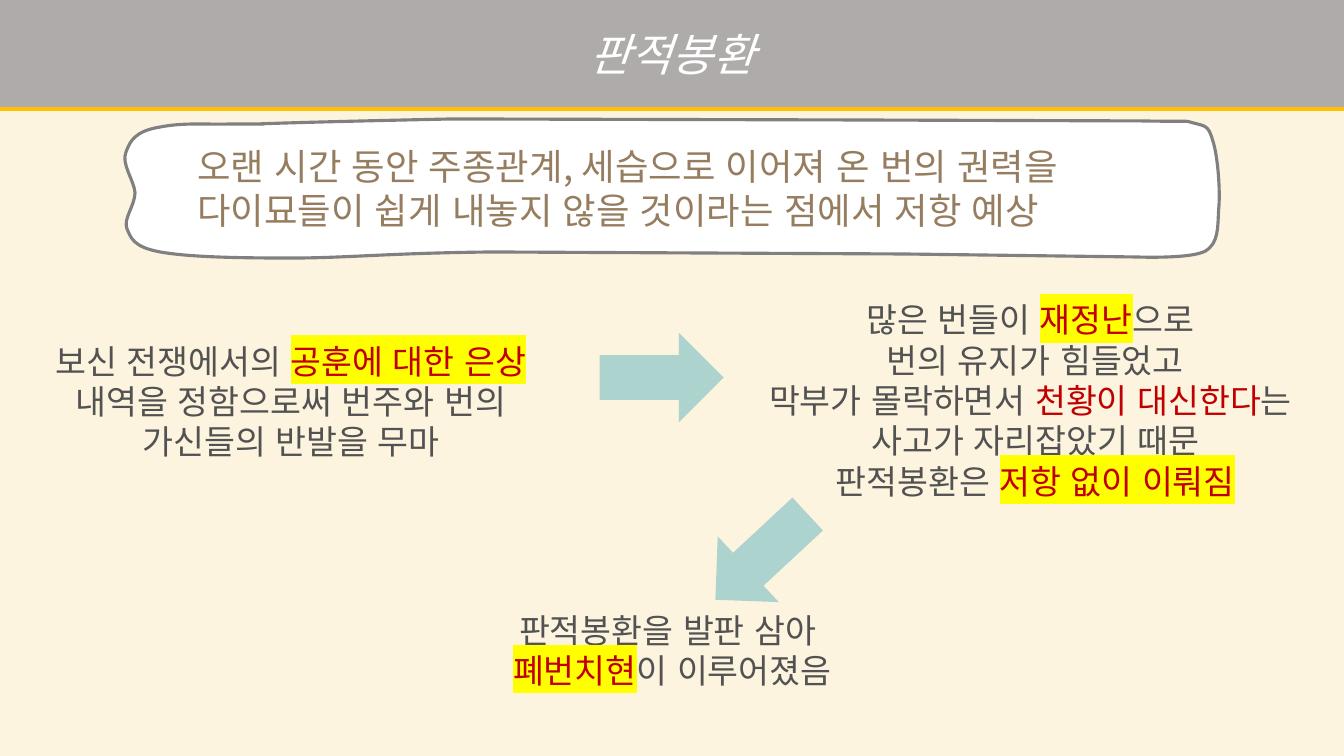
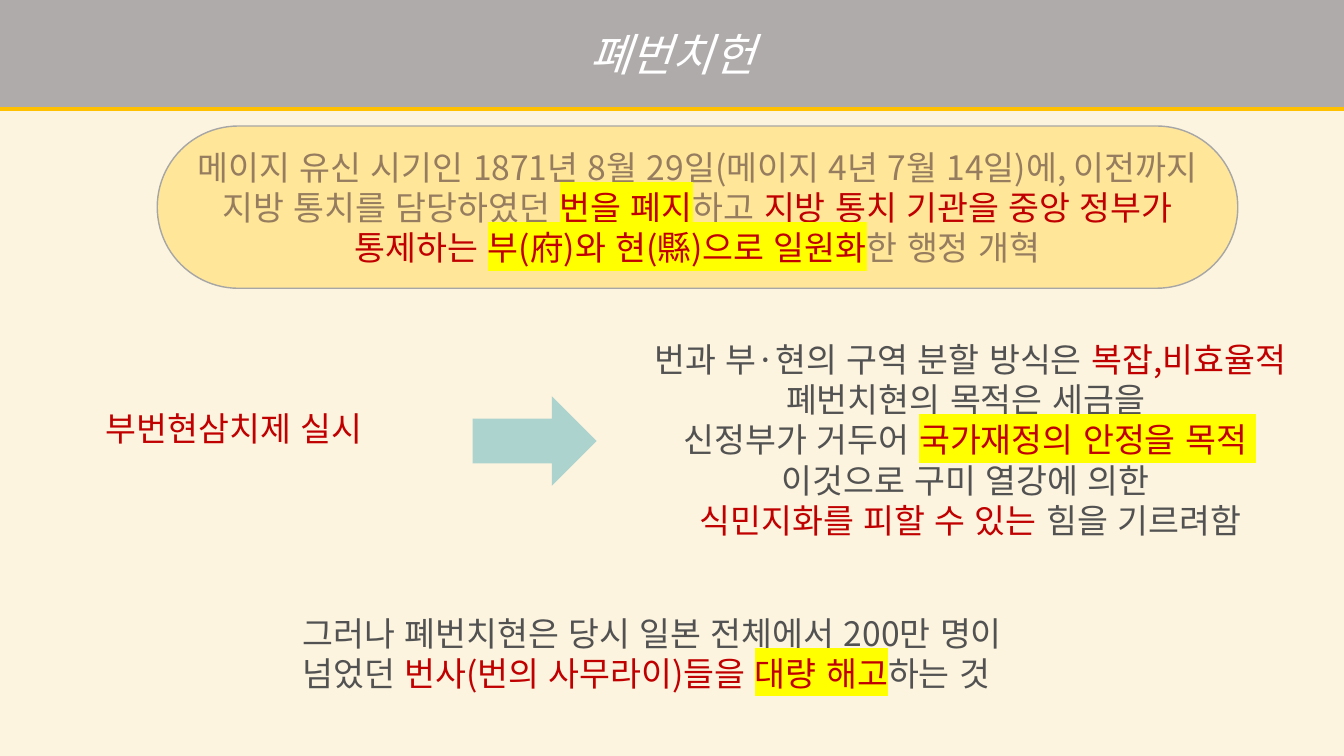
"""Build two slides on the return of the domains and their abolition."""
from lxml import etree
from pptx import Presentation
from pptx.dml.color import RGBColor
from pptx.enum.lang import MSO_LANGUAGE_ID as LANG
from pptx.enum.shapes import MSO_SHAPE as SHAPE
from pptx.enum.text import MSO_ANCHOR as ANCHOR, PP_ALIGN as ALIGN
from pptx.oxml.ns import qn
from pptx.util import Inches, Pt

FONT = "Noto Sans CJK KR"
CREAM = RGBColor(0xFC, 0xF4, 0xDF)
WHITE = RGBColor(0xFF, 0xFF, 0xFF)
BAND = RGBColor(0xAF, 0xAB, 0xAB)
GOLD = RGBColor(0xFF, 0xC0, 0x00)
YELLOW = RGBColor(0xFF, 0xFF, 0x00)
SAND = RGBColor(0xFF, 0xE6, 0x99)
TEAL = RGBColor(0xAC, 0xD3, 0xCE)
OUTLINE = RGBColor(0x80, 0x80, 0x80)
PILL_LINE = RGBColor(0xA6, 0xA6, 0xA6)
BROWN = RGBColor(0x96, 0x7D, 0x5F)
GRAY = RGBColor(0x52, 0x52, 0x52)
RED = RGBColor(0xC0, 0x00, 0x00)

STYLES = {
    "title": (WHITE, False),
    "brown": (BROWN, False),
    "gray": (GRAY, False),
    "red": (RED, False),
    "mark": (RED, True),
}


def write(tf, paragraphs, size=24, align=ALIGN.CENTER, **extra):
    """Fill a text frame with paragraphs of (style, text) runs."""
    tf.word_wrap = True
    for i, runs in enumerate(paragraphs):
        p = tf.paragraphs[0] if i == 0 else tf.add_paragraph()
        p.alignment = align
        for style, text in runs:
            color, marked = STYLES[style]
            r = p.add_run()
            r.text = text
            r.font.color.rgb = color
            rpr = r._r.get_or_add_rPr()
            if marked:
                hl = etree.SubElement(rpr, qn("a:highlight"))
                etree.SubElement(hl, qn("a:srgbClr"), val=str(YELLOW))
            fmt = {"name": FONT, "size": Pt(size), "language_id": LANG.KOREAN, **extra}
            for key, value in fmt.items():
                setattr(r.font, key, value)
            etree.SubElement(rpr, qn("a:ea"), typeface=FONT)


def paint(sp, fill, line=None, width=1):
    """Give a shape a flat fill and an optional outline."""
    sp.shadow.inherit = False
    sp.fill.solid()
    sp.fill.fore_color.rgb = fill
    if line is None:
        sp.line.fill.background()
    else:
        sp.line.color.rgb = line
        sp.line.width = Pt(width)


prs = Presentation()
prs.slide_width, prs.slide_height = Inches(40 / 3), Inches(7.5)
bg = prs.slide_master.background.fill
bg.solid()
bg.fore_color.rgb = CREAM

SCROLL_START = (2.56, 1.23)
SCROLL = [
    (3.05, 1.21, 4.49, 1.18, 4.49, 1.18),
    (8.35, 1.19),
    (11.32, 1.2),
    (11.9, 1.21, 11.72, 1.19, 11.84, 1.22),
    (11.95, 1.25, 11.99, 1.24, 12.03, 1.39),
    (12.08, 1.53, 12.11, 1.89, 12.09, 2.08),
    (12.08, 2.26, 12.09, 2.41, 11.96, 2.49),
    (11.82, 2.57, 11.29, 2.55, 11.29, 2.55),
    (8.97, 2.52),
    (4.89, 2.5),
    (3.87, 2.51, 3.44, 2.56, 2.89, 2.56),
    (2.34, 2.56, 1.87, 2.55, 1.59, 2.5),
    (1.32, 2.45, 1.3, 2.36, 1.26, 2.27),
    (1.22, 2.17, 1.34, 2.04, 1.34, 1.91),
    (1.33, 1.79, 1.2, 1.62, 1.25, 1.51),
    (1.29, 1.4, 1.34, 1.3, 1.59, 1.26),
    (1.84, 1.21, 2.12, 1.24, 2.28, 1.23),
    (2.45, 1.23, 2.75, 1.23, 2.56, 1.23),
]

SLIDES = [
    {
        "title": "판적봉환",
        "texts": [
            ((1.86, 1.38, 9.61, 0.98), 26, ALIGN.LEFT, [
                [("brown", "오랜 시간 동안 주종관계, 세습으로 이어져 온 번의 권력을")],
                [("brown", "다이묘들이 쉽게 내놓지 않을 것이라는 점에서 저항 예상")],
            ]),
            ((0.14, 3.33, 5.49, 1.31), 24, ALIGN.CENTER, [
                [("gray", "보신 전쟁에서의 "), ("mark", "공훈에 대한 은상"),
                 ("gray", " 내역을 정함으로써 번주와 번의 가신들의 반발을 무마")],
            ]),
            ((7.3, 2.92, 5.94, 2.12), 24, ALIGN.CENTER, [
                [("gray", "많은 번들이 "), ("mark", "재정난"), ("gray", "으로 ")],
                [("gray", "번의 유지가 힘들었고")],
                [("gray", "막부가 몰락하면서 "), ("red", "천황이 대신한다"), ("gray", "는 ")],
                [("gray", "사고가 자리잡았기 때문")],
                [("gray", "판적봉환은 "), ("mark", "저항 없이 이뤄짐")],
            ]),
            ((2.89, 6, 7.56, 0.91), 24, ALIGN.CENTER, [
                [("gray", "판적봉환을 발판 삼아 ")],
                [("mark", "폐번치현"), ("gray", "이 이루어졌음")],
            ]),
        ],
        "arrows": [(5.95, 3.3, 1.23, 0), (6.93, 5.08, 1.25, 137.1)],
    },
    {
        "title": "폐번치헌",
        "texts": [
            ((6.03, 3.31, 7.19, 2.12), 24, ALIGN.CENTER, [
                [("gray", "번과 부·현의 구역 분할 방식은 "), ("red", "복잡,비효율적")],
                [("gray", "폐번치현의 목적은 세금을 ")],
                [("gray", "신정부가 거두어 "), ("mark", "국가재정의 안정을 목적 ")],
                [("gray", "이것으로 구미 열강에 의한 ")],
                [("red", "식민지화를 피할 수 있는"), ("gray", " 힘을 기르려함")],
            ]),
            ((0.95, 4, 3.5, 0.5), 24, ALIGN.LEFT, [[("red", "부번현삼치제 실시")]]),
            ((2.9, 6.03, 7.83, 0.91), 24, ALIGN.LEFT, [
                [("gray", "그러나 폐번치현은 당시 일본 전체에서 200만 명이 넘었던 "),
                 ("red", "번사(번의 사무라이)들을 "), ("mark", "대량 해고"),
                 ("gray", "하는 것")],
            ]),
        ],
        "arrows": [(4.69, 3.93, 1.23, 0)],
    },
]

PILL_TEXT = [[
    ("brown", "메이지 유신 시기인 1871년 8월 29일(메이지 4년 7월 14일)에, "
              "이전까지 지방 통치를 담당하였던 "),
    ("mark", "번을 폐지"),
    ("brown", "하고 "),
    ("red", "지방 통치 기관을 중앙 정부가 통제하는 "),
    ("mark", "부(府)와 현(縣)으로 일원화"),
    ("brown", "한 행정 개혁"),
]]

for number, content in enumerate(SLIDES):
    s = prs.slides.add_slide(prs.slide_layouts[5])

    title = s.shapes.title
    title.left, title.top = 0, 0
    title.width, title.height = prs.slide_width, Inches(1.06)
    title.fill.solid()
    title.fill.fore_color.rgb = BAND
    effects = etree.SubElement(title._element.spPr, qn("a:effectLst"))
    shadow = etree.SubElement(effects, qn("a:outerShdw"), blurRad="0", dist=str(Pt(3)),
                              dir="5400000", algn="t", rotWithShape="0")
    etree.SubElement(shadow, qn("a:srgbClr"), val=str(GOLD))
    title.text_frame.vertical_anchor = ANCHOR.MIDDLE
    write(title.text_frame, [[("title", content["title"])]], 32, italic=True)

    if number == 0:
        fb = s.shapes.build_freeform(*[Inches(v) for v in SCROLL_START])
        fb.add_line_segments([(Inches(seg[-2]), Inches(seg[-1])) for seg in SCROLL], close=True)
        scroll = fb.convert_to_shape()
        paint(scroll, WHITE, OUTLINE, 2.25)
        for seg, edge in zip(SCROLL, list(scroll._element.iter(qn("a:lnTo")))):
            if len(seg) == 6:
                curve = etree.Element(qn("a:cubicBezTo"))
                for x, y in zip(seg[::2], seg[1::2]):
                    etree.SubElement(curve, qn("a:pt"), x=str(Inches(x) - scroll.left),
                                     y=str(Inches(y) - scroll.top))
                edge.getparent().replace(edge, curve)
    else:
        pill = s.shapes.add_shape(SHAPE.ROUNDED_RECTANGLE, Inches(1.56), Inches(1.25),
                                  Inches(10.72), Inches(1.61))
        pill.adjustments[0] = 0.5
        paint(pill, SAND, PILL_LINE)
        pill.text_frame.vertical_anchor = ANCHOR.MIDDLE
        write(pill.text_frame, PILL_TEXT)

    for box, size, align, paragraphs in content["texts"]:
        tb = s.shapes.add_textbox(*[Inches(v) for v in box])
        write(tb.text_frame, paragraphs, size, align)

    for x, y, w, angle in content["arrows"]:
        arrow = s.shapes.add_shape(SHAPE.RIGHT_ARROW, Inches(x), Inches(y), Inches(w), Inches(0.89))
        arrow.rotation = angle
        paint(arrow, TEAL)

prs.save("out.pptx")
